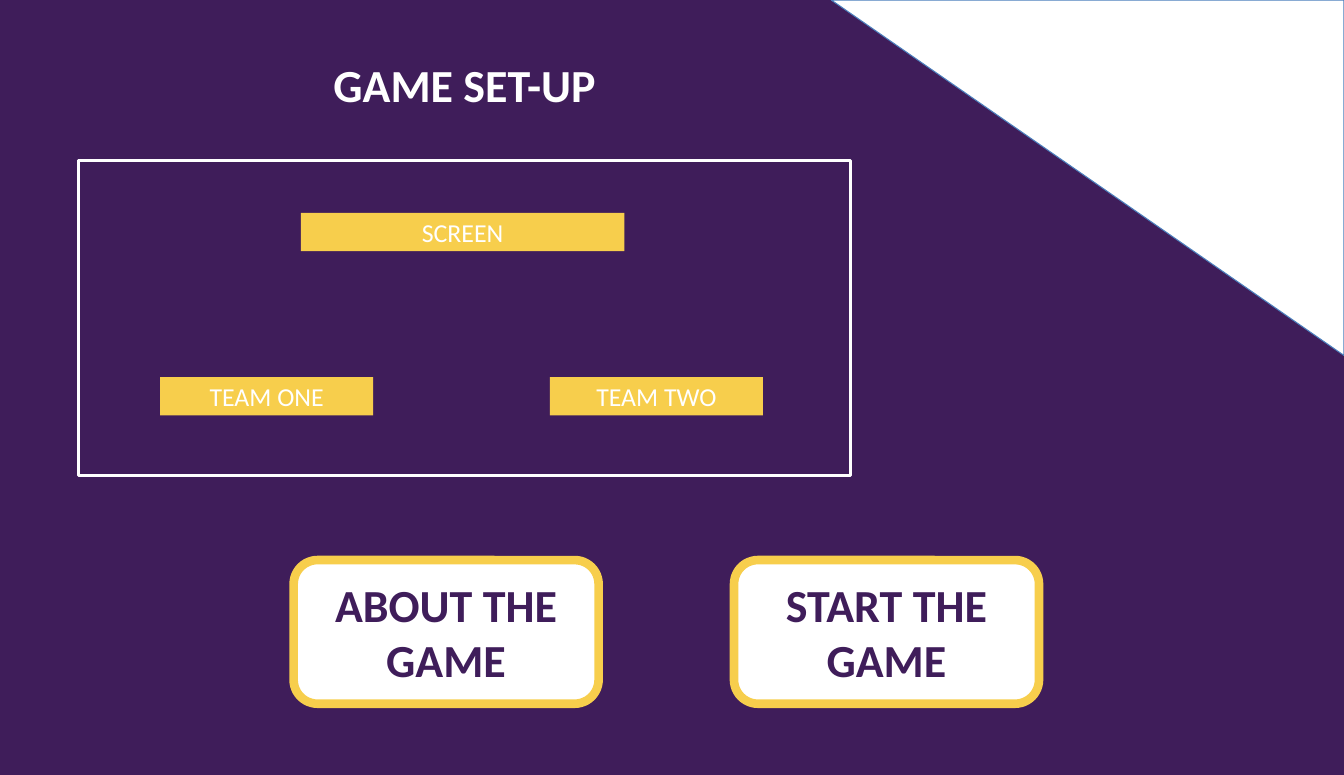
from dataclasses import dataclass
from typing import Optional

from pptx import Presentation
from pptx.dml.color import RGBColor
from pptx.enum.shapes import MSO_SHAPE
from pptx.enum.text import MSO_ANCHOR, MSO_AUTO_SIZE, PP_ALIGN
from pptx.util import Inches, Pt

RECT = MSO_SHAPE.RECTANGLE
ROUND = MSO_SHAPE.ROUNDED_RECTANGLE
WEDGE = MSO_SHAPE.RIGHT_TRIANGLE
MIDDLE = MSO_ANCHOR.MIDDLE
CENTER = PP_ALIGN.CENTER
GROW = MSO_AUTO_SIZE.SHAPE_TO_FIT_TEXT

# Grid of square cells, ten to the inch
COLS, ROWS = 130, 75
CELL = Inches(0.1)


@dataclass(frozen=True)
class Theme:
    purple: RGBColor = RGBColor.from_string("3F1D5A")
    gold: RGBColor = RGBColor.from_string("F7CE4C")
    white: RGBColor = RGBColor.from_string("FFFFFF")
    blue: RGBColor = RGBColor.from_string("4B7EBC")
    font: str = "Calibri"
    large: int = 32
    small: int = 18


THEME = Theme()


@dataclass(frozen=True)
class Area:
    col: float
    row: float
    wide: float
    high: float

    def box(self) -> list[int]:
        return [round(n * CELL) for n in (self.col, self.row, self.wide, self.high)]


@dataclass(frozen=True)
class Look:
    kind: MSO_SHAPE = RECT
    fill: Optional[RGBColor] = None
    line: Optional[RGBColor] = None
    width: float = 0
    turn: int = 0


@dataclass(frozen=True)
class Type:
    size: int
    color: RGBColor
    bold: bool = False


def write(shape, text: str, style: Type) -> None:
    frame = shape.text_frame
    frame.word_wrap = True
    para = frame.paragraphs[0]
    para.alignment = CENTER
    run = para.add_run()
    run.text = text
    form = {"name": THEME.font, "size": Pt(style.size), "bold": style.bold}
    for name, value in form.items():
        setattr(run.font, name, value)
    run.font.color.rgb = style.color


def draw(slide, area: Area, look: Look, text: str = "", style: Optional[Type] = None) -> None:
    shape = slide.shapes.add_shape(look.kind, *area.box())
    shape.shadow.inherit = False
    shape.rotation = look.turn
    if look.fill is None:
        shape.fill.background()
    else:
        shape.fill.solid()
        shape.fill.fore_color.rgb = look.fill
    if look.line is None:
        shape.line.fill.background()
    else:
        shape.line.color.rgb = look.line
        shape.line.width = Pt(look.width)
    if style:
        shape.text_frame.vertical_anchor = MIDDLE
        write(shape, text, style)


def title(slide, area: Area, text: str, style: Type) -> None:
    box = slide.shapes.add_textbox(*area.box())
    write(box, text, style)
    box.text_frame.auto_size = GROW


def main() -> None:
    deck = Presentation()
    deck.slide_width, deck.slide_height = COLS * CELL, ROWS * CELL
    slide = deck.slides.add_slide(deck.slide_layouts[6])
    back = slide.background.fill
    back.solid()
    back.fore_color.rgb = THEME.purple

    # Corner wedge and heading
    wide = 49.6
    wedge = Look(WEDGE, THEME.white, THEME.blue, 0.75, 180)
    draw(slide, Area(COLS - wide, 0, wide, 34.4), wedge)
    title(slide, Area(22.5, 5, 44.9, 6.4), "GAME SET-UP", Type(THEME.large, THEME.white, True))

    # Room plan: frame, screen and teams
    draw(slide, Area(7.6, 15.5, 74.7, 30.5), Look(line=THEME.white, width=2))
    bar, label = Look(fill=THEME.gold), Type(THEME.small, THEME.white)
    draw(slide, Area(29.1, 20.6, 31.3, 3.7), bar, "SCREEN", label)
    for i, text in enumerate(("TEAM ONE", "TEAM TWO")):
        draw(slide, Area(15.5 + i * 37.7, 36.5, 20.6, 3.7), bar, text, label)

    # Buttons
    key = Look(ROUND, THEME.white, THEME.gold, 6)
    bold = Type(THEME.large, THEME.purple, True)
    for i, text in enumerate(("ABOUT THE GAME", "START THE GAME")):
        draw(slide, Area(28.4 + i * 42.6, 54.2, 29.5, 13.9), key, text, bold)

    deck.save("out.pptx")


if __name__ == "__main__":
    main()
